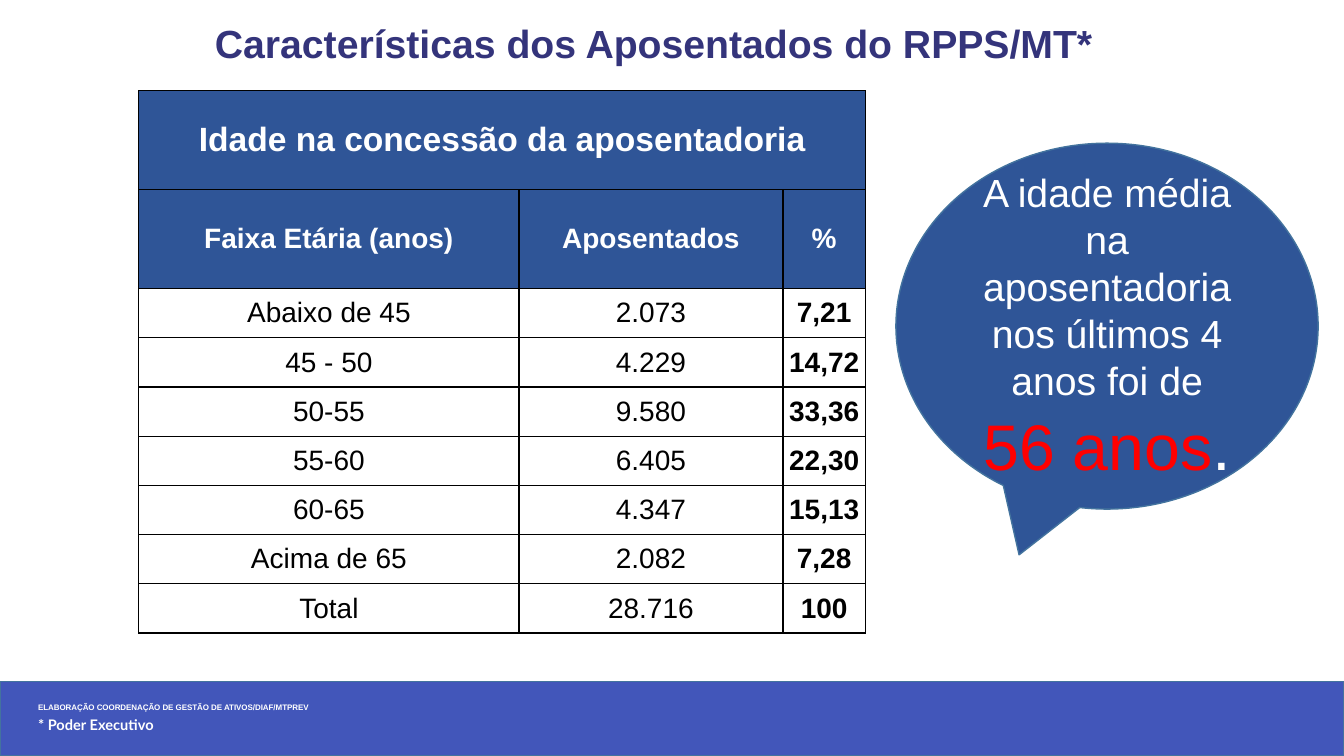
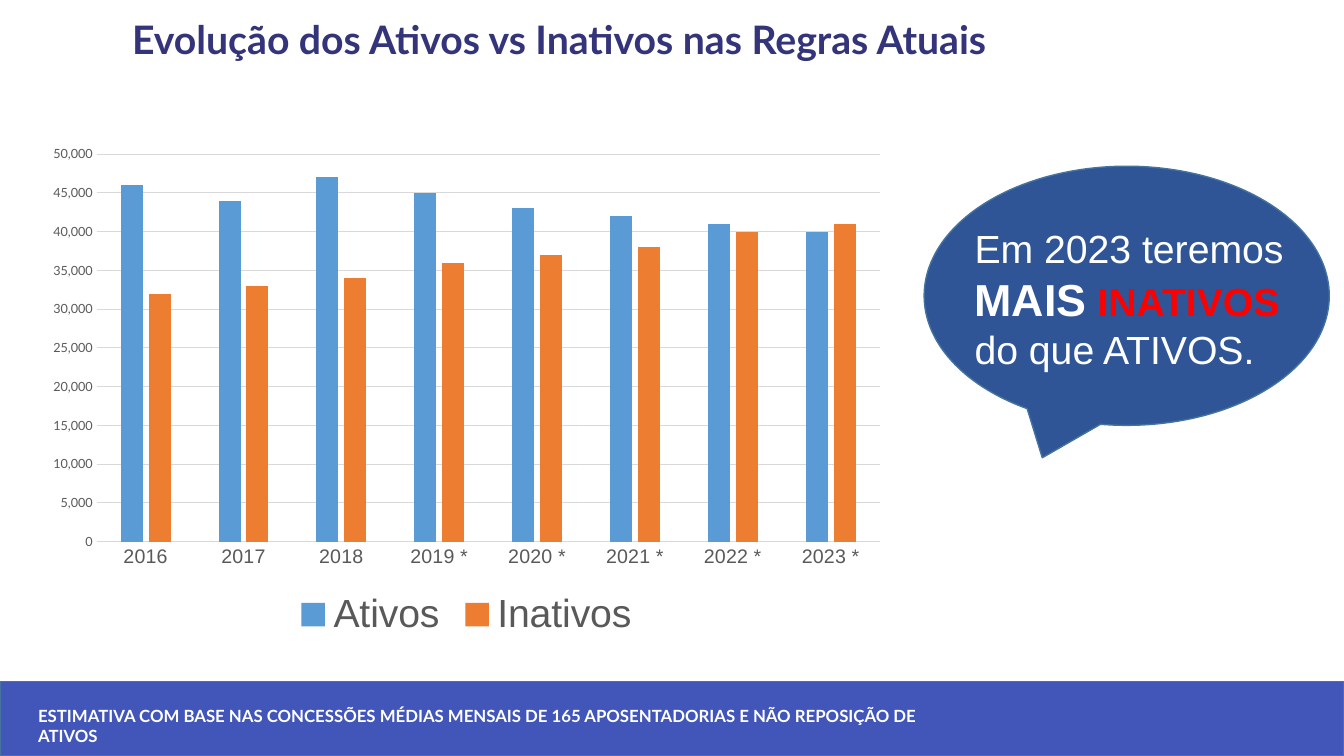
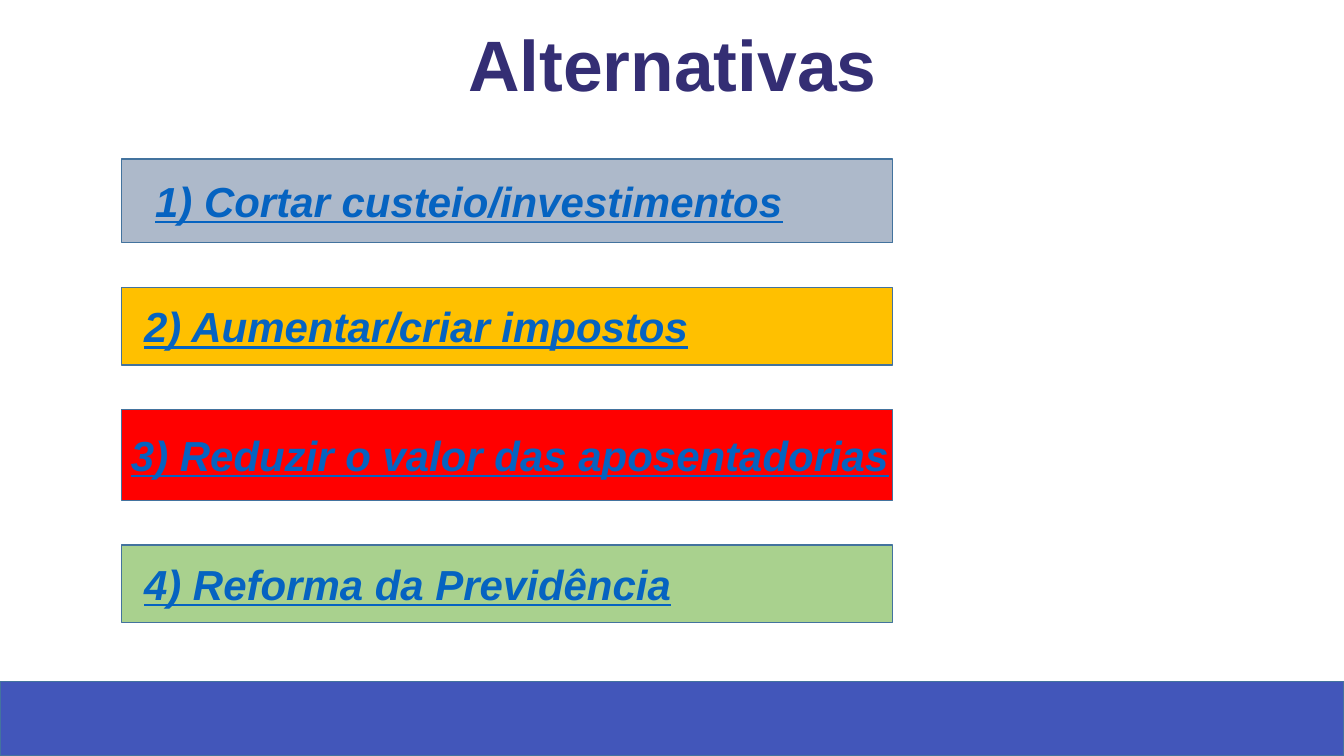
"""Build three slides on the state pension scheme: a table, a chart and a list of options."""
import lxml.etree
import pptx
import pptx.chart.data
import pptx.dml.color
import pptx.enum.chart
import pptx.enum.shapes
import pptx.enum.text
import pptx.oxml.ns
import pptx.util

Cm, Pt = pptx.util.Cm, pptx.util.Pt
rgb = pptx.dml.color.RGBColor.from_string
qn = pptx.oxml.ns.qn
MSO = pptx.enum.shapes.MSO_SHAPE
ALIGN = pptx.enum.text.PP_ALIGN
ANCHOR = pptx.enum.text.MSO_ANCHOR

NAVY, TITLE, EDGE, BAND = "2F5597", "34347B", "43739E", "4256BA"
WHITE, BLACK, RED, GREY, RULE = "FFFFFF", "000000", "FF0000", "595959", "D9D9D9"


def add_run(p, text, size, color=WHITE, bold=False, name="Arial"):
    r = p.add_run()
    r.text = text
    r.font.size, r.font.bold, r.font.name = Pt(size), bold, name
    r.font.color.rgb = rgb(color)
    return r


def add_box(s, kind, left, top, width, height, fill):
    sp = s.shapes.add_shape(kind, Cm(left), Cm(top), Cm(width), Cm(height))
    sp.shadow.inherit = False
    sp.fill.solid()
    sp.fill.fore_color.rgb = rgb(fill)
    sp.line.color.rgb = rgb(EDGE)
    sp.line.width = Pt(1)
    return sp


prs = pptx.Presentation()
prs.slide_width, prs.slide_height = Cm(33.87), Cm(19.05)

titles = [
    ("Características dos Aposentados do RPPS/MT*", (4.75, 0.36, 23.44, 1.45), 28, TITLE, "Arial"),
    ("Evolução dos Ativos vs Inativos nas Regras Atuais", (-0.2, 0.25, 28.58, 2.64), 28, TITLE, "Lato"),
    ("Alternativas", (6.91, 0, 20.07, 4.01), 88, "342E74", "Arial"),
]
for text, box, size, color, name in titles:
    s = prs.slides.add_slide(prs.slide_layouts[5])
    sp = s.shapes.title
    sp.left, sp.top, sp.width, sp.height = [Cm(v) for v in box]
    tf = sp.text_frame
    tf.word_wrap = True
    tf.auto_size = pptx.enum.text.MSO_AUTO_SIZE.NONE
    tf.vertical_anchor = ANCHOR.TOP
    p = tf.paragraphs[0]
    p.alignment = ALIGN.CENTER
    r = add_run(p, text, size, color, True, name)
r._r.get_or_add_rPr().set("baseline", "30000")
s1, s2, s3 = prs.slides

band = add_box(s1, MSO.RECTANGLE, 0, 17.17, 33.87, 1.88, BAND)
band.element.nvSpPr.cNvPr.set("id", "20")
prs.slide_master.shapes.element.insert(2, band.element)

footers = [
    (s1, 0.7, 6, [("ELABORAÇÃO COORDENAÇÃO DE GESTÃO DE ATIVOS/DIAF/MTPREV", 5.7, "Arial"),
                  ("* Poder Executivo", 10.4, "Lato")]),
    (s2, 1, 0, [("ESTIMATIVA COM BASE NAS CONCESSÕES MÉDIAS MENSAIS DE 165 APOSENTADORIAS "
                 "E NÃO REPOSIÇÃO DE ATIVOS", 12, "Lato")]),
]
for s, spacing, after, lines in footers:
    tf = s.shapes.add_textbox(Cm(0.71), Cm(17.65), Cm(23.6), Cm(1.02)).text_frame
    tf.word_wrap = True
    for i, (text, size, name) in enumerate(lines):
        p = tf.add_paragraph() if i else tf.paragraphs[0]
        p.line_spacing = spacing
        p.space_after = Pt(after)
        add_run(p, text, size, WHITE, True, name)

rows = [
    ("Idade na concessão da aposentadoria", "", ""),
    ("Faixa Etária (anos)", "Aposentados", "%"),
    ("Abaixo de 45", "2.073", "7,21"),
    ("45 - 50", "4.229", "14,72"),
    ("50-55", "9.580", "33,36"),
    ("55-60", "6.405", "22,30"),
    ("60-65", "4.347", "15,13"),
    ("Acima de 65", "2.082", "7,28"),
    ("Total", "28.716", "100"),
]
table = s1.shapes.add_table(len(rows), 3, Cm(3.5), Cm(2.29), Cm(18.31), Cm(13.66)).table
table.first_row = table.horz_banding = False
for col, width in zip(table.columns, (9.58, 6.65, 2.08)):
    col.width = Cm(width)
table.cell(0, 0).merge(table.cell(0, 2))
for i, row in enumerate(rows):
    head = i < 2
    table.rows[i].height = Cm(2.49 if head else 1.24)
    for j, text in enumerate(row):
        cell = table.cell(i, j)
        cell.margin_left = cell.margin_right = cell.margin_top = cell.margin_bottom = 0
        cell.vertical_anchor = ANCHOR.MIDDLE
        tcPr = cell._tc.get_or_add_tcPr()
        for side in ("a:lnL", "a:lnR", "a:lnT", "a:lnB"):
            ln = lxml.etree.SubElement(tcPr, qn(side), w=str(Pt(1)))
            fill = lxml.etree.SubElement(ln, qn("a:solidFill"))
            lxml.etree.SubElement(fill, qn("a:srgbClr"), val=BLACK)
        if head:
            cell.fill.solid()
            cell.fill.fore_color.rgb = rgb(NAVY)
        else:
            cell.fill.background()
        if text:
            p = cell.text_frame.paragraphs[0]
            p.alignment = ALIGN.CENTER
            add_run(p, text, 20 if i else 24, WHITE if head else BLACK, head or j == 2)

callout = add_box(s1, MSO.OVAL_CALLOUT, 22.58, 3.61, 10.64, 9.22, NAVY)
tf = callout.text_frame
tf.word_wrap = True
p = tf.paragraphs[0]
p.alignment = ALIGN.CENTER
add_run(p, "A idade média na aposentadoria nos últimos 4 anos foi de", 28)
p = tf.add_paragraph()
p.alignment = ALIGN.CENTER
add_run(p, "56 anos", 46, RED)
add_run(p, ".", 48)

add_box(s2, MSO.OVAL_CALLOUT, 23.29, 4.19, 10.21, 6.53, NAVY)
tf = s2.shapes.add_textbox(Cm(24.31), Cm(5.54), Cm(8.61), Cm(4.01)).text_frame
tf.word_wrap = True
p = tf.paragraphs[0]
add_run(p, "Em 2023 teremos ", 28)
add_run(p, "MAIS", 32, bold=True)
add_run(p, " ", 28)
add_run(p, "INATIVOS ", 28, RED, True)
add_run(p, "do que ATIVOS.", 28)

series = [
    ("Ativos", "5B9BD5", (46000, 44000, 47000, 45000, 43000, 42000, 41000, 40000)),
    ("Inativos", "ED7D31", (32000, 33000, 34000, 36000, 37000, 38000, 40000, 41000)),
]
data = pptx.chart.data.CategoryChartData(number_format="#,##0")
data.categories = ["2016", "2017", "2018", "2019 *", "2020 *", "2021 *", "2022 *", "2023 *"]
for name, color, values in series:
    data.add_series(name, values)
chart = s2.shapes.add_chart(pptx.enum.chart.XL_CHART_TYPE.COLUMN_CLUSTERED,
                            Cm(0.91), Cm(3.43), Cm(21.69), Cm(12.8), data).chart
chart.has_title = False
chart.font.size, chart.font.name = Pt(10), "Lato"
chart.has_legend = True
chart.legend.position = pptx.enum.chart.XL_LEGEND_POSITION.BOTTOM
chart.legend.include_in_layout = False
plot = chart.plots[0]
plot.vary_by_categories = False
plot.gap_width, plot.overlap = 219, -27
for ser, (name, color, values) in zip(plot.series, series):
    ser.format.fill.solid()
    ser.format.fill.fore_color.rgb = rgb(color)
cat, val = chart.category_axis, chart.value_axis
for font, size, name in ((cat.tick_labels.font, 14, "Arial"),
                         (val.tick_labels.font, 9, "Lato"),
                         (chart.legend.font, 28, "Arial")):
    font.size, font.name = Pt(size), name
    font.color.rgb = rgb(GREY)
for axis in (cat, val):
    axis.major_tick_mark = axis.minor_tick_mark = pptx.enum.chart.XL_TICK_MARK.NONE
for line in (cat.format.line, val.major_gridlines.format.line):
    line.color.rgb = rgb(RULE)
    line.width = Pt(0.75)
val.format.line.fill.background()
val.minimum_scale, val.maximum_scale, val.major_unit = 0, 50000, 5000
val.tick_labels.number_format = "#,##0"
val.tick_labels.number_format_is_linked = False

options = [
    ("1) Cortar custeio/investimentos", 2.11, "ADB9CA", 0.84),
    ("2) Aumentar/criar impostos", 1.96, "FFC000", 0.56),
    ("3) Reduzir o valor das aposentadorias", 2.29, RED, 0.23),
    ("4) Reforma da Previdência", 1.96, "A9D18E", 0.56),
]
top, gap = 4.01, 1.12
for text, height, color, indent in options:
    tf = add_box(s3, MSO.RECTANGLE, 3.07, top, 19.43, height, color).text_frame
    tf.word_wrap = True
    tf.margin_left, tf.margin_right = Cm(indent), 0
    p = tf.paragraphs[0]
    p.alignment = ALIGN.LEFT
    r = add_run(p, text, 30, "0563C1", True)
    r.font.italic = r.font.underline = True
    top += height + gap

prs.save("out.pptx")
